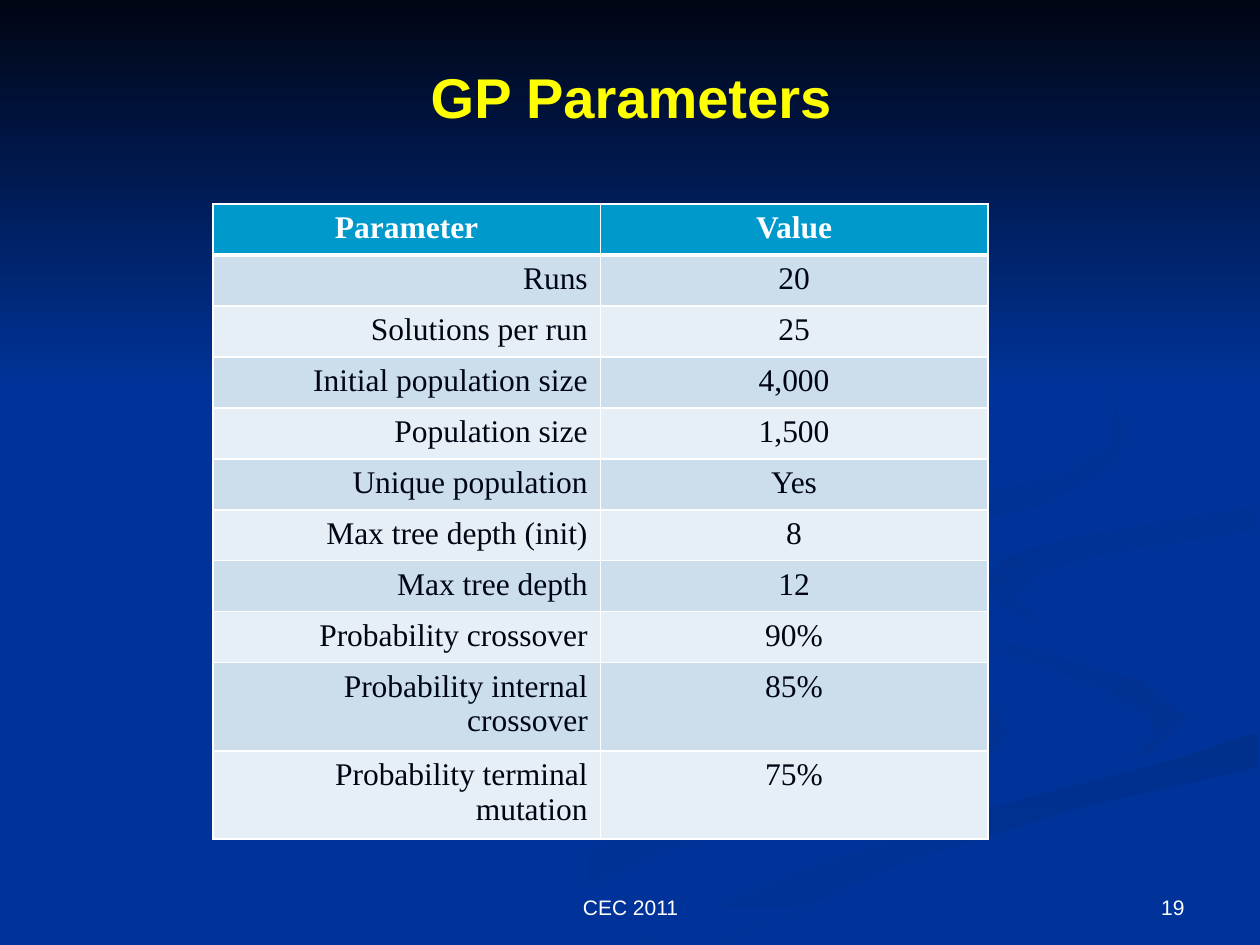
import pptx
import pptx.util
import pptx.dml.color
import pptx.enum.text
import pptx.oxml
import pptx.oxml.ns


class Theme:
    background, night = "003399", "000514"
    title, light, ink = "FFFF00", "FFFFFF", "000514"
    header, bands = "0099CC", ("CCDEEC", "E7EFF6")
    sans, serif = "Arial", "Times New Roman"
    title_size, table_size, footer_size = 32, 18, 12
    rule, header_rule = 1, 3


rgb = pptx.dml.color.RGBColor.from_string
ALIGN = pptx.enum.text.PP_ALIGN
ANCHOR = pptx.enum.text.MSO_ANCHOR

prs = pptx.Presentation()
prs.slide_width, prs.slide_height = pptx.util.Inches(10), pptx.util.Inches(7.5)
COLUMNS = 1000  # all lengths are counted on a grid of 1000 columns, 750 rows
unit = prs.slide_width // COLUMNS
s = prs.slides.add_slide(prs.slide_layouts[6])
s.background.fill.solid()
s.background.fill.fore_color.rgb = rgb(Theme.background)


def write(tf, text, align, font, size, color, bold=False):
    tf.text = text
    p = tf.paragraphs[0]
    p.alignment = align
    f = p.runs[0].font
    f.name, f.size, f.bold = font, pptx.util.Pt(size), bold
    f.color.rgb = rgb(color)


# Background ribbons and top shade: start colour, end colour, angle, outline
base = Theme.background
outlines = [
    (base, "003193", 0, [
        (781, 553), (682, 519), (594, 485), (575, 459), (570, 472), (654, 513),
        (770, 551), (785, 570), (727, 602), (499, 661), (300, 749), (361, 749),
        (532, 674), (780, 605), (800, 581)]),
    (base, "003193", 45, [
        (943, 570), (905, 540), (758, 498), (724, 464), (746, 500), (868, 544),
        (911, 567), (917, 585), (894, 605), (932, 589)]),
    ("002F8C", base, 90, [
        (503, 749), (571, 749), (722, 682), (861, 640), (998, 609), (998, 581),
        (936, 602), (764, 647), (630, 693)]),
    (base, base, 0, [
        (725, 464), (759, 498), (905, 540), (943, 570), (911, 600), (704, 655),
        (477, 749), (503, 749), (630, 693), (765, 647), (999, 581), (999, 538),
        (848, 503), (782, 460), (811, 437), (999, 402), (999, 387), (770, 427)]),
    ("003091", base, 45, [
        (781, 460), (791, 478), (826, 496), (805, 474), (828, 453), (878, 439),
        (998, 420), (998, 402), (849, 427), (799, 442)]),
    ("002F8E", base, 45, [
        (683, 430), (825, 402), (883, 370), (894, 344), (873, 299), (821, 261),
        (762, 233), (846, 279), (885, 320), (882, 354), (842, 378), (649, 420),
        (584, 446), (580, 474), (622, 500), (593, 470), (614, 448)]),
    (Theme.night, base, 90, [(0, 0), (0, 308), (1000, 308), (1000, 0)]),
]
for start, end, angle, points in outlines:
    builder = s.shapes.build_freeform(*points[0], scale=unit)
    builder.add_line_segments(points[1:], close=True)
    sp = builder.convert_to_shape()
    sp.shadow.inherit = False
    sp.line.fill.background()
    if start == end:
        sp.fill.solid()
        sp.fill.fore_color.rgb = rgb(start)
        continue
    sp.fill.gradient()
    sp.fill.gradient_angle = -angle % 360  # counted anticlockwise
    for stop, color in zip(sp.fill.gradient_stops, (start, end)):
        stop.color.rgb = rgb(color)

# Title and footer
texts = [
    ("GP Parameters", (51, 21, 900, 110), ANCHOR.MIDDLE, ALIGN.CENTER,
     Theme.title_size, Theme.title, True),
    ("19", (717, 683, 233, 52), ANCHOR.BOTTOM, ALIGN.RIGHT,
     Theme.footer_size, Theme.light, False),
    ("CEC 2011", (342, 683, 317, 52), ANCHOR.BOTTOM, ALIGN.CENTER,
     Theme.footer_size, Theme.light, False),
]
for text, box, anchor, align, size, color, bold in texts:
    tf = s.shapes.add_textbox(*(v * unit for v in box)).text_frame
    tf.word_wrap = True
    tf.vertical_anchor = anchor
    write(tf, text, align, Theme.sans, size, color, bold)

# Parameter table
parameters = [
    ("Parameter", "Value"),
    ("Runs", "20"),
    ("Solutions per run", "25"),
    ("Initial population size", "4,000"),
    ("Population size", "1,500"),
    ("Unique population", "Yes"),
    ("Max tree depth (init)", "8"),
    ("Max tree depth", "12"),
    ("Probability crossover", "90%"),
    ("Probability internal crossover", "85%"),
    ("Probability terminal mutation", "75%"),
]
table = s.shapes.add_table(len(parameters), 2, 169 * unit, 162 * unit,
                           615 * unit, 445 * unit).table
for i, row in enumerate(parameters):
    is_header = i == 0
    fill = Theme.header if is_header else Theme.bands[(i - 1) % 2]
    color = Theme.light if is_header else Theme.ink
    for j, text in enumerate(row):
        cell = table.cell(i, j)
        align = ALIGN.CENTER if is_header or j == 1 else ALIGN.RIGHT
        write(cell.text_frame, text, align, Theme.serif, Theme.table_size,
              color, is_header)
        # Borders, with a heavier rule under the header
        tcPr = cell._tc.get_or_add_tcPr()
        for side in "LRTB":
            heavy = (i, side) in ((0, "B"), (1, "T"))
            width = Theme.header_rule if heavy else Theme.rule
            tcPr.append(pptx.oxml.parse_xml(
                f'<a:ln{side} {pptx.oxml.ns.nsdecls("a")} w="{pptx.util.Pt(width)}">'
                f'<a:solidFill><a:srgbClr val="{Theme.light}"/></a:solidFill>'
                f'</a:ln{side}>'))
        cell.fill.solid()
        cell.fill.fore_color.rgb = rgb(fill)

prs.save("out.pptx")
